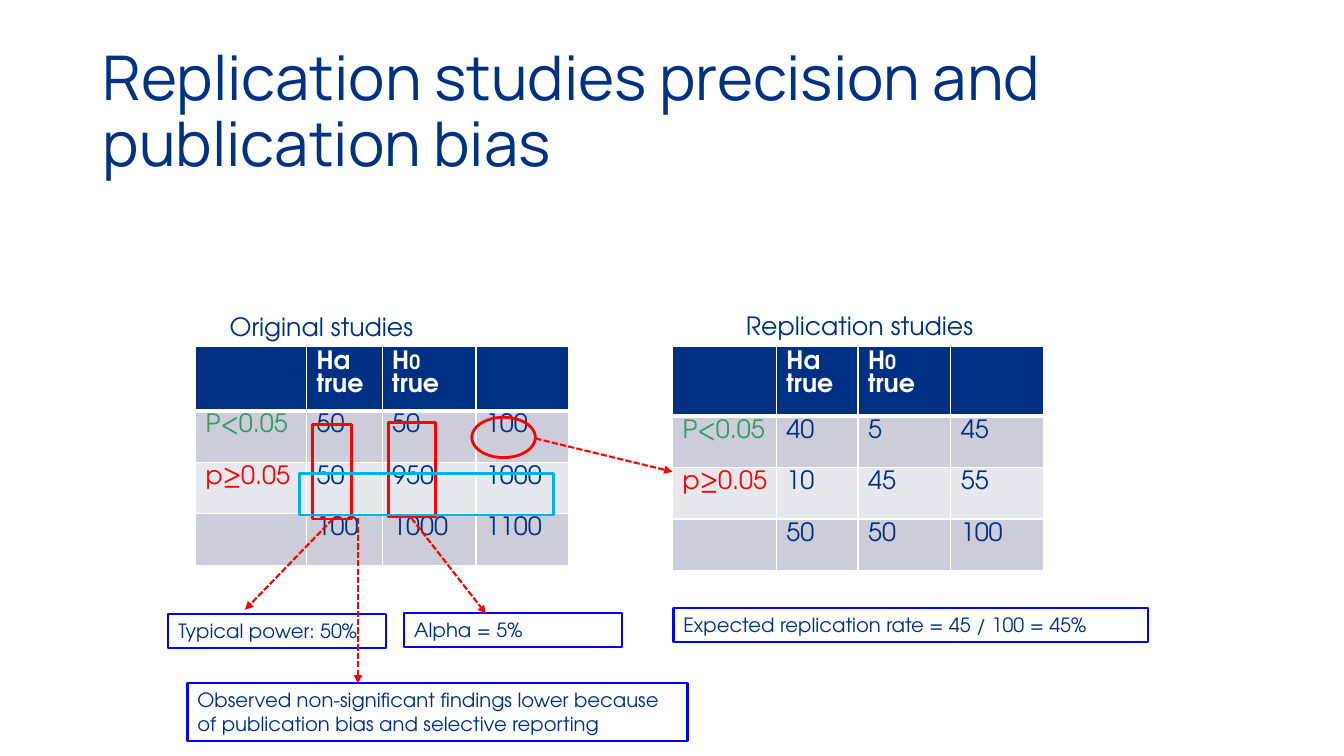
from lxml import etree
from pptx import Presentation
from pptx.dml.color import RGBColor
from pptx.enum.dml import MSO_LINE
from pptx.enum.shapes import MSO_CONNECTOR, MSO_SHAPE
from pptx.enum.text import MSO_ANCHOR, PP_ALIGN
from pptx.oxml.ns import qn
from pptx.util import Inches, Pt

BODY = "TeX Gyre Adventor"
NAVY, WHITE, RED, BLUE, CYAN, GREEN = "003083", "FFFFFF", "FF0000", "0000FF", "00B0F0", "339966"
BANDS = ["CCCDD9", "E7E8ED"]


def color(value):
    return RGBColor.from_string(value)


def add_run(p, text, size, fill=NAVY, font=BODY, bold=False):
    r = p.add_run()
    r.text = text
    for name, value in {"size": Pt(size), "name": font, "bold": bold}.items():
        setattr(r.font, name, value)
    r.font.color.rgb = color(fill)


def add_label(slide, box, text, size, fill=NAVY, font=BODY, anchor=MSO_ANCHOR.TOP, spacing=1.0):
    tf = slide.shapes.add_textbox(*map(Inches, box)).text_frame
    tf.word_wrap = True
    tf.vertical_anchor = anchor
    p = tf.paragraphs[0]
    p.line_spacing = spacing
    add_run(p, text, size, fill, font)


def add_outline(slide, box, line, width, kind=MSO_SHAPE.RECTANGLE):
    sp = slide.shapes.add_shape(kind, *map(Inches, box))
    sp.shadow.inherit = False
    sp.fill.background()
    sp.line.color.rgb = color(line)
    sp.line.width = Pt(width)
    return sp


def add_note(slide, box, text):
    tf = add_outline(slide, box, BLUE, 1.5).text_frame
    tf.word_wrap = True
    tf.vertical_anchor = MSO_ANCHOR.TOP
    tf.paragraphs[0].alignment = PP_ALIGN.LEFT
    add_run(tf.paragraphs[0], text, 14)


def add_arrow(slide, start, end):
    cx = slide.shapes.add_connector(MSO_CONNECTOR.STRAIGHT, *map(Inches, start + end))
    cx.line.color.rgb = color(RED)
    cx.line.width = Pt(1.5)
    cx.line.dash_style = MSO_LINE.SQUARE_DOT
    etree.SubElement(cx.line._get_or_add_ln(), qn("a:tailEnd"), type="triangle")
    etree.SubElement(cx._element.spPr, qn("a:effectLst"))


def set_borders(cell, header):
    tcPr = cell._tc.get_or_add_tcPr()
    for i, side in enumerate(["lnL", "lnR", "lnT", "lnB"]):
        width = 3 if header and side == "lnB" else 1
        ln = etree.Element(qn(f"a:{side}"), w=str(Pt(width)))
        fill = etree.SubElement(ln, qn("a:solidFill"))
        etree.SubElement(fill, qn("a:srgbClr"), val=WHITE)
        tcPr.insert(i, ln)


def add_study_table(slide, left, top, widths, header_height, counts):
    heights = [header_height] + [0.51] * 3
    box = (left, top, sum(widths), sum(heights))
    table = slide.shapes.add_table(4, 4, *map(Inches, box)).table
    for col, width in zip(table.columns, widths):
        col.width = Inches(width)
    for row, height in zip(table.rows, heights):
        row.height = Inches(height)
    header = [[], [("Ha true", 18)], [("H", 18), ("0", 14), (" true", 18)], []]
    names = [("P<0.05", GREEN), ("p≥0.05", RED), ("", NAVY)]
    for i in range(4):
        for j in range(4):
            cell = table.cell(i, j)
            cell.margin_bottom = Inches(0.01)
            if j == 0:
                cell.margin_right = 0
            cell.fill.solid()
            cell.fill.fore_color.rgb = color(BANDS[(i - 1) % 2] if i else NAVY)
            set_borders(cell, i == 0)
            p = cell.text_frame.paragraphs[0]
            p.line_spacing = 0.9 if i else 0.96
            if i == 0:
                for text, size in header[j]:
                    add_run(p, text, size, WHITE, bold=True)
            else:
                text, fill = (str(counts[i - 1][j - 1]), NAVY) if j else names[i - 1]
                if text:
                    add_run(p, text, 18, fill)


def add_original_studies(slide, left, top):
    add_study_table(slide, left, top, [1.1, 0.75, 0.93, 0.92], 0.56,
                    [[50, 50, 100], [50, 950, 1000], [100, 1000, 1100]])
    add_label(slide, (left + 0.24, top - 0.4, 2.91, 0.4), "Original studies", 18)


def add_replication_studies(slide, left, top):
    add_study_table(slide, left, top, [1.03, 0.81, 0.92, 0.92], 0.69,
                    [[40, 5, 45], [10, 45, 55], [50, 50, 100]])
    add_label(slide, (left + 0.63, top - 0.41, 2.91, 0.4), "Replication studies", 18)
    add_note(slide, (left + 0.01, top + 2.59, 4.71, 0.34),
             "Expected replication rate = 45 / 100 = 45%")


def add_annotations(slide, left, top):
    def at(x, y, *size):
        return (left + x, top + y) + size

    add_outline(slide, at(2.74, 0.7, 0.63, 0.4), RED, 2, MSO_SHAPE.OVAL)
    add_outline(slide, at(1.16, 0.77, 0.39, 0.94), RED, 2)
    add_outline(slide, at(1.91, 0.75, 0.47, 0.94), RED, 2)
    add_outline(slide, at(1.03, 1.26, 2.52, 0.41), CYAN, 2)
    add_note(slide, at(-0.27, 2.65, 2.16, 0.34), "Typical power: 50%")
    add_note(slide, at(2.07, 2.64, 2.16, 0.34), "Alpha = 5%")
    add_note(slide, at(-0.08, 3.34, 4.96, 0.57),
             "Observed non-significant findings lower because of publication bias "
             "and selective reporting")
    for start, end in [((3.37, 0.91), (4.73, 1.24)), ((1.36, 1.71), (0.49, 2.61)),
                       ((2.14, 1.7), (2.88, 2.65)), ((1.61, 1.7), (1.61, 3.34))]:
        add_arrow(slide, at(*start), at(*end))


def main():
    prs = Presentation()
    prs.slide_width, prs.slide_height = Inches(13.33), Inches(7.5)
    s = prs.slides.add_slide(prs.slide_layouts[6])
    add_label(s, (0.92, 0.4, 11.5, 1.45), "Replication studies precision and publication bias",
              44, "003183", "Manrope", MSO_ANCHOR.MIDDLE, 0.9)
    add_original_studies(s, 1.94, 3.44)
    add_replication_studies(s, 6.67, 3.44)
    add_annotations(s, 1.94, 3.44)
    prs.save("out.pptx")


if __name__ == "__main__":
    main()
